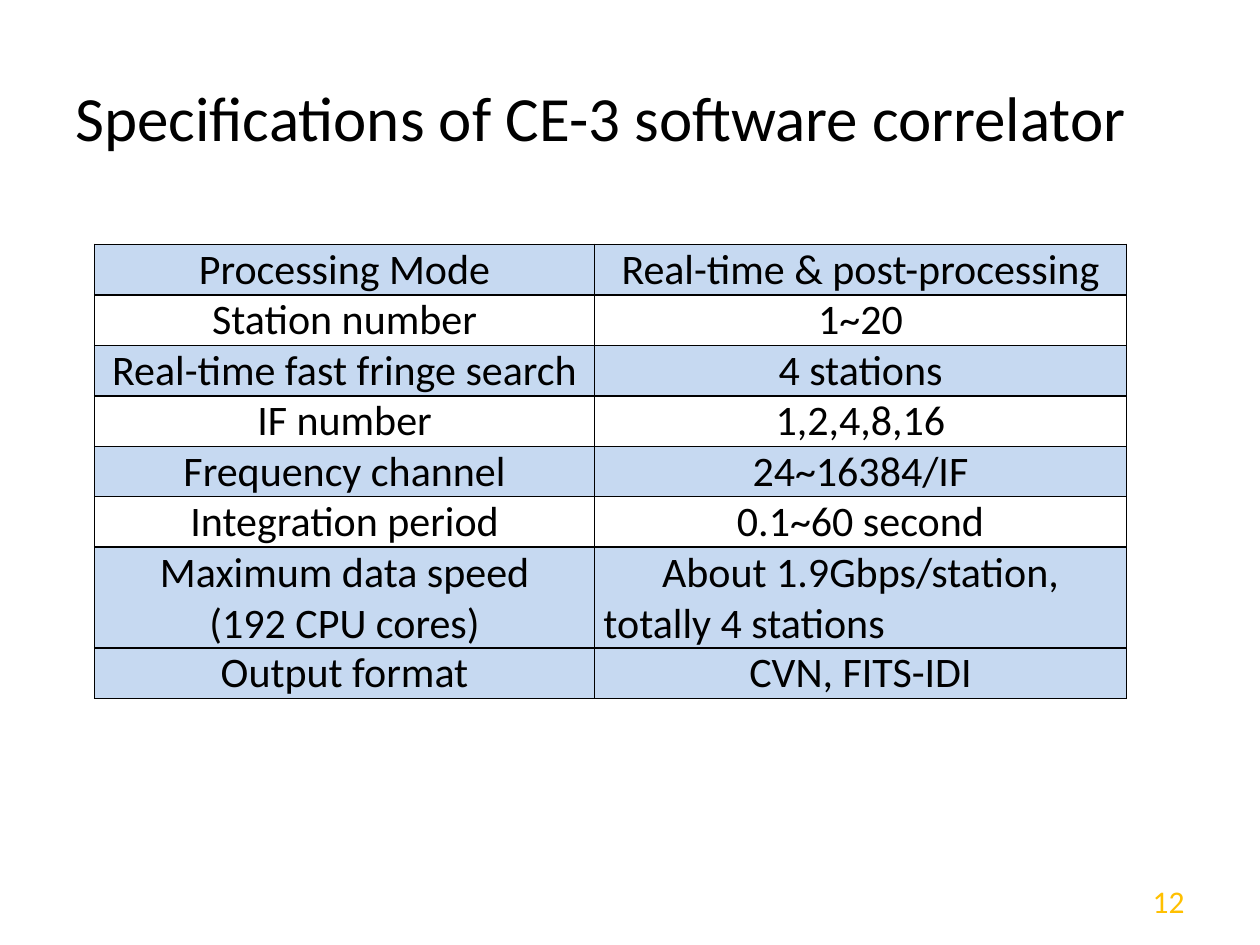
"""Build the slide listing the specifications of the CE-3 software correlator."""
from dataclasses import dataclass

from lxml.etree import SubElement
from pptx import Presentation
from pptx.dml.color import RGBColor
from pptx.enum.text import MSO_ANCHOR as Anchor, PP_ALIGN as Align
from pptx.oxml.ns import qn
from pptx.util import Inches, Pt


@dataclass(frozen=True)
class Theme:
    font: str = "Calibri"
    ink: str = "000000"
    accent: str = "FFC000"
    band: str = "C6D9F1"
    title: int = 36
    body: int = 24
    number: int = 18
    rule: int = 1


theme = Theme()


def write(para, text, size, color, align):
    para.alignment = align
    span = para.add_run()
    span.text = text
    span.font.name = theme.font
    span.font.size = Pt(size)
    span.font.color.rgb = RGBColor.from_string(color)


def outline(cell):
    properties = cell._tc.get_or_add_tcPr()
    for position, side in enumerate(("lnL", "lnR", "lnT", "lnB")):
        line = SubElement(properties, qn(f"a:{side}"), w=str(Pt(theme.rule)))
        fill = SubElement(line, qn("a:solidFill"))
        SubElement(fill, qn("a:srgbClr"), val=theme.ink)
        properties.insert(position, line)


deck = Presentation()
deck.slide_width, deck.slide_height = Inches(10), Inches(7.5)
page = deck.slides.add_slide(deck.slide_layouts[6])

labels = [
    ("Specifications of CE-3 software correlator", (0.5, 0.3, 9, 1.25),
     theme.title, theme.ink, Align.LEFT),
    ("12", (7.17, 6.95, 2.33, 0.4), theme.number, theme.accent, Align.RIGHT),
]
for text, place, size, color, align in labels:
    box = page.shapes.add_textbox(*map(Inches, place))
    frame = box.text_frame
    frame.word_wrap = True
    frame.vertical_anchor = Anchor.MIDDLE
    write(frame.paragraphs[0], text, size, color, align)

center, left = Align.CENTER, Align.LEFT
rows = [
    (True, [("Processing Mode", center)], [("Real-time & post-processing", center)]),
    (False, [("Station number", center)], [("1~20", center)]),
    (True, [("Real-time fast fringe search", center)], [("4 stations", center)]),
    (False, [("IF number", center)], [("1,2,4,8,16", center)]),
    (True, [("Frequency channel", center)], [("24~16384/IF", center)]),
    (False, [("Integration period", center)], [("0.1~60 second", center)]),
    (True, [("Maximum data speed", center), ("(192 CPU cores)", center)],
     [("About 1.9Gbps/station,", center), ("totally 4 stations", left)]),
    (True, [("Output format", center)], [("CVN, FITS-IDI", center)]),
]
widths = (3.97, 4.22)
row_height = 0.4
table = page.shapes.add_table(
    len(rows), len(widths), Inches(0.75), Inches(1.94),
    Inches(sum(widths)), Inches(row_height * len(rows))).table
table.first_row = table.horz_banding = False
for column, width in zip(table.columns, widths):
    column.width = Inches(width)

for row, (shaded, *contents) in zip(table.rows, rows):
    row.height = Inches(row_height * len(contents[0]))
    for cell, lines in zip(row.cells, contents):
        cell.margin_left = cell.margin_right = Inches(0.07)
        cell.margin_top = cell.margin_bottom = Inches(0)
        cell.vertical_anchor = Anchor.MIDDLE
        if shaded:
            cell.fill.solid()
            cell.fill.fore_color.rgb = RGBColor.from_string(theme.band)
        else:
            cell.fill.background()
        outline(cell)
        for index, (text, align) in enumerate(lines):
            frame = cell.text_frame
            para = frame.add_paragraph() if index else frame.paragraphs[0]
            write(para, text, theme.body, theme.ink, align)

deck.save("out.pptx")
